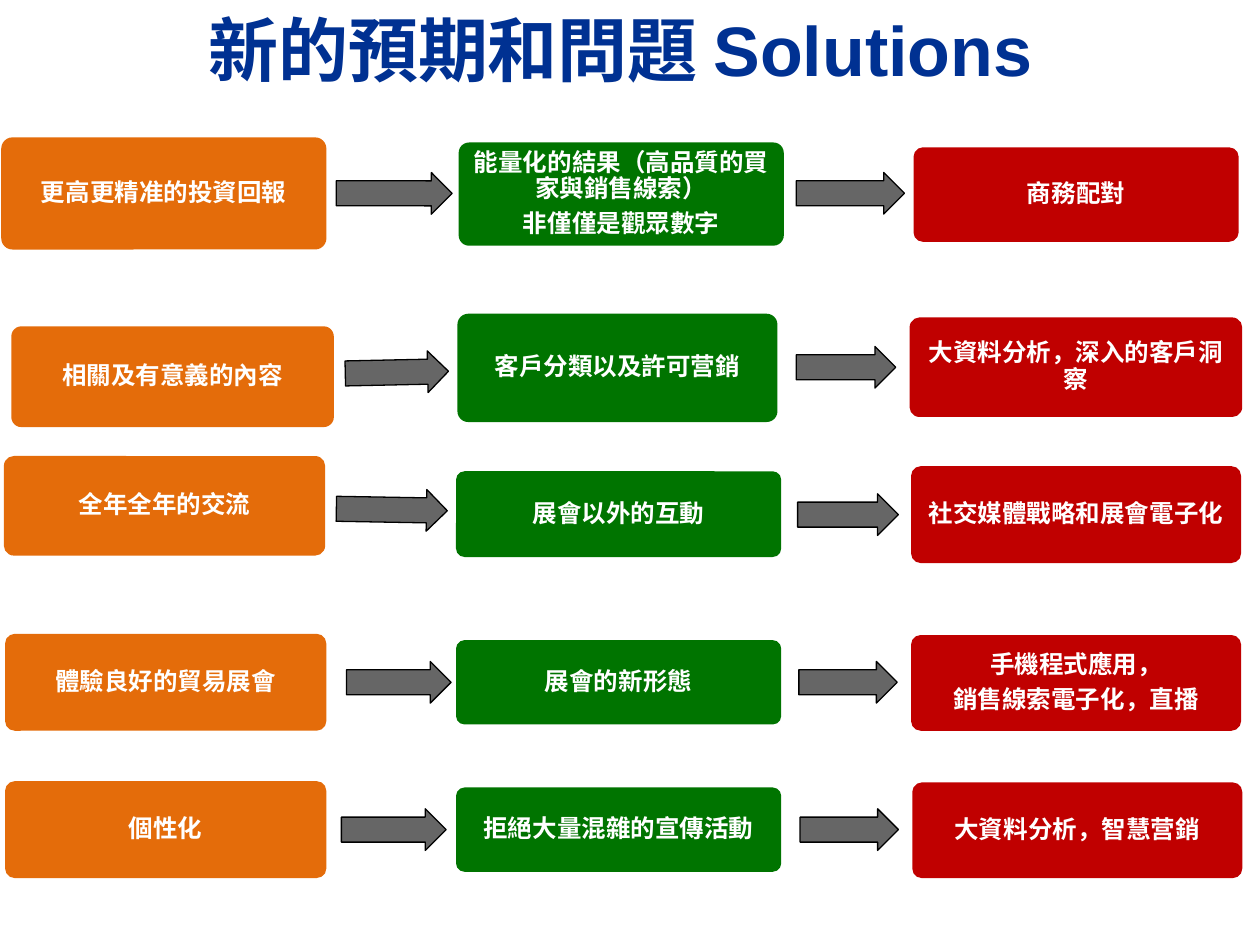
from lxml.etree import SubElement
from pptx import Presentation
from pptx.dml.color import RGBColor
from pptx.enum.shapes import MSO_SHAPE as SHAPE
from pptx.enum.text import MSO_ANCHOR as ANCHOR, MSO_AUTO_SIZE as AUTO_SIZE, PP_ALIGN as ALIGN
from pptx.oxml.ns import qn
from pptx.util import Pt

COLORS = ("E46C0A", "007400", "C00000")
ARROW_H = 23.8
# Each row: three boxes (left, top, width, height, text), two arrows (left, top, width, rotation).
ROWS = (
    (((0.7, 78.5, 185.8, 64.1, "更高更精准的投資回報"),
      (262.1, 81.4, 185.8, 59, "能量化的結果（高品質的買家與銷售線索）\n非僅僅是觀眾數字"),
      (522, 84.2, 185.8, 54, "商務配對")),
     ((192.2, 98.6, 66.2, 0.1), (455, 98.6, 61.9, 0))),
    (((6.5, 186.5, 184.3, 57.6, "相關及有意義的內容"),
      (261.4, 179.3, 182.9, 61.9, "客戶分類以及許可营銷"),
      (519.8, 181.4, 190.1, 56.9, "大資料分析，深入的客戶洞察")),
     ((197.3, 200.9, 59, -1.2), (455, 198, 56.9, 0))),
    (((2.2, 260.6, 183.6, 56.9, "全年全年的交流"),
      (260.6, 269.3, 185.8, 49, "展會以外的互動"),
      (520.6, 266.4, 188.6, 55.4, "社交媒體戰略和展會電子化")),
     ((192.2, 279.4, 63.4, 1), (455.8, 282.2, 57.6, 0))),
    (((2.9, 362.2, 183.6, 55.4, "體驗良好的貿易展會"),
      (260.6, 365.8, 185.8, 48.2, "展會的新形態"),
      (520.6, 362.9, 188.6, 54.7, "手機程式應用，\n銷售線索電子化，直播")),
     ((198, 378, 59.8, 0), (456.5, 378, 56.2, 0))),
    (((2.9, 446.4, 183.6, 55.4, "個性化"),
      (260.6, 450, 185.8, 48.2, "拒絕大量混雜的宣傳活動"),
      (521.3, 447.1, 188.6, 54.7, "大資料分析，智慧营銷")),
     ((195.1, 462.2, 59.8, 0), (457.2, 462.2, 56.2, 0))),
)


def rgb(color):
    """Turn a hex string into a colour."""
    return RGBColor.from_string(color)


def set_font(p, size, color):
    """Centre a paragraph and give it a bold font."""
    p.alignment = ALIGN.CENTER
    p.font.name = "Arial"
    p.font.size = Pt(size)
    p.font.bold = True
    p.font.color.rgb = rgb(color)


def add_title(s, text):
    """Fill the title placeholder across the top of the slide."""
    sp = s.shapes.title
    sp.left, sp.top, sp.width, sp.height = Pt(0), Pt(0), Pt(720), Pt(90)
    tf = sp.text_frame
    tf.text = text
    tf.auto_size = AUTO_SIZE.NONE
    tf.vertical_anchor = ANCHOR.TOP
    set_font(tf.paragraphs[0], 40, "003192")


def add_filled(shapes, kind, box, color):
    """Add a preset shape with a plain fill and no shadow."""
    sp = shapes.add_shape(kind, *(Pt(v) for v in box))
    sp.shadow.inherit = False
    sp.fill.solid()
    sp.fill.fore_color.rgb = rgb(color)
    return sp


def add_box(shapes, box, text, color):
    """Add a rounded box with centred white text."""
    sp = add_filled(shapes, SHAPE.ROUNDED_RECTANGLE, box, color)
    sp.adjustments[0] = 0.1
    sp.line.fill.background()
    tf = sp.text_frame
    tf.word_wrap = True
    tf.vertical_anchor = ANCHOR.MIDDLE
    tf.margin_left = tf.margin_right = tf.margin_top = tf.margin_bottom = Pt(6)
    tf.text = text
    for p in tf.paragraphs:
        p.line_spacing = 0.9
        p.space_after = Pt(5)
        set_font(p, 14, "FFFFFF")


def add_arrow(shapes, left, top, width, rotation):
    """Add a translucent black block arrow."""
    sp = add_filled(shapes, SHAPE.RIGHT_ARROW, (left, top, width, ARROW_H), "000000")
    sp.adjustments[0], sp.adjustments[1] = 0.6, 0.5
    sp.rotation = rotation
    clr = sp.fill._xPr.find(qn("a:solidFill"))[0]
    SubElement(clr, qn("a:alpha"), val="60000")
    sp.line.color.rgb = rgb("000000")
    sp.line.width = Pt(0.75)


def add_row(s, boxes, arrows):
    """Add one grouped row of boxes joined by arrows."""
    shapes = s.shapes.add_group_shape().shapes
    for (*box, text), color in zip(boxes, COLORS):
        add_box(shapes, box, text, color)
    for arrow in arrows:
        add_arrow(shapes, *arrow)


def main():
    """Build the slide and save it."""
    prs = Presentation()
    prs.slide_width, prs.slide_height = Pt(720), Pt(540)
    s = prs.slides.add_slide(prs.slide_layouts[5])
    add_title(s, "新的預期和問題 Solutions ")
    for boxes, arrows in ROWS:
        add_row(s, boxes, arrows)
    prs.save("out.pptx")


if __name__ == "__main__":
    main()
